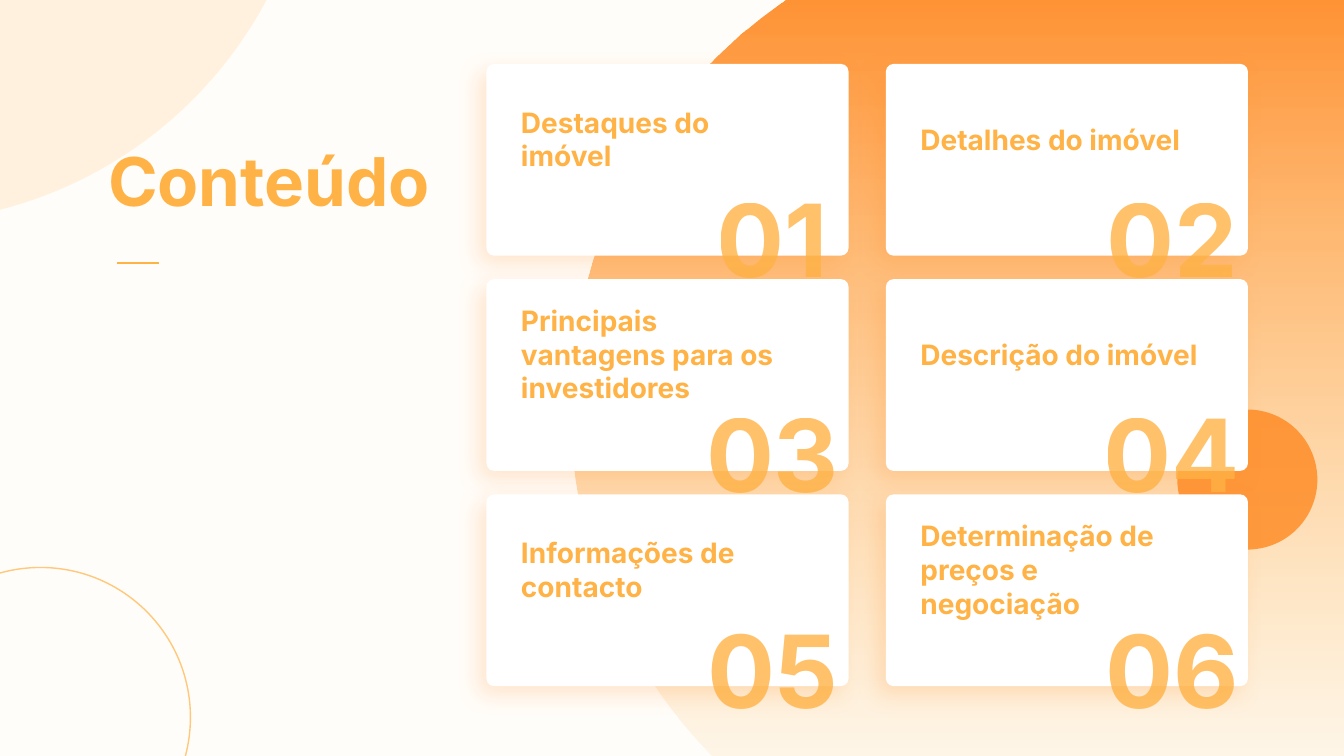
from dataclasses import dataclass
from itertools import pairwise
from math import cos, radians, sin, tan

from lxml import etree
from pptx import Presentation
from pptx import util as u
from pptx.dml.color import RGBColor
from pptx.enum import shapes, text
from pptx.oxml.ns import qn


@dataclass(frozen=True)
class Theme:
    """Colours, type face and type sizes of the deck."""
    paper: str = "FFFDF9"
    white: str = "FFFFFF"
    amber: str = "FFB245"
    flame: str = "FF881F"
    face: str = "Inter"
    head: int = 48
    label: int = 20
    digit: int = 72


THEME = Theme()
WIDE, HIGH = 33.87, 19.05
LABELS = (
    "Destaques do imóvel", "Detalhes do imóvel",
    "Principais vantagens para os investidores", "Descrição do imóvel",
    "Informações de contacto", "Determinação de preços e negociação",
)


def tint(code):
    """Turn a hex code into a colour."""
    return RGBColor.from_string(code)


def place(box):
    """Turn a box in centimetres into lengths."""
    return [u.Cm(side) for side in box]


def fade(shape, *shares):
    """Give the colours of a shape their opacity in percent."""
    for node, share in zip(shape.element.iter(qn("a:srgbClr")), shares):
        etree.SubElement(node, qn("a:alpha"), val=str(share * 1000))


def paint(shape, code):
    """Fill a shape with one colour and drop its line and shadow."""
    shape.shadow.inherit = False
    shape.fill.solid()
    shape.fill.fore_color.rgb = tint(code)
    shape.line.fill.background()


def glow(shape):
    """Cast a soft warm shadow to the lower left."""
    cast = etree.SubElement(
        shape.element.spPr.find(qn("a:effectLst")), qn("a:outerShdw"),
        blurRad=str(u.Pt(16)), dist=str(u.Pt(8)), dir=str(135 * 60000),
        algn="tr", rotWithShape="0")
    hue = etree.SubElement(cast, qn("a:srgbClr"), val=THEME.flame)
    etree.SubElement(hue, qn("a:alpha"), val="20000")


def write(shape, words, size, anchor, align, wrap=True):
    """Set one bold amber paragraph in a shape."""
    frame = shape.text_frame
    frame.auto_size = text.MSO_AUTO_SIZE.NONE
    frame.word_wrap = wrap
    frame.vertical_anchor = anchor
    line = frame.paragraphs[0]
    line.text = words
    line.alignment = align
    font = line.font
    font.name, font.size, font.bold = THEME.face, u.Pt(size), True
    font.color.rgb = tint(THEME.amber)
    return frame


def curve(page, hub, ray, turns, ends=(), close=True):
    """Draw arcs between turns in degrees, then go on through the end points."""
    def spot(turn, pull=0):
        """Find a point on the circle, pulled along its tangent."""
        t = radians(turn)
        return (hub[0] + ray * (cos(t) - pull * sin(t)),
                hub[1] + ray * (sin(t) + pull * cos(t)))

    dots = [spot(turns[0])]
    for start, stop in pairwise(turns):
        pull = 4 / 3 * tan(radians(stop - start) / 4)
        dots += [spot(start, pull), spot(stop, -pull), spot(stop)]
    dots = [place(dot) for dot in [*dots, *ends]]
    pen = page.shapes.build_freeform(*dots[0])
    pen.add_line_segments(dots[1:], close=close)
    shape = pen.convert_to_shape()

    lines = list(shape.element.iter(qn("a:lnTo")))
    for i in range(0, 3 * (len(turns) - 1), 3):
        bend = etree.Element(qn("a:cubicBezTo"))
        lines[i].addprevious(bend)
        for line in lines[i:i + 3]:
            bend.append(line[0])
            line.getparent().remove(line)
    return shape


def back(page, box):
    """Draw the backdrop of circles and the short rule."""
    left, top, wide, high = box
    right, base = left + wide, top + high

    sun = curve(page, (left + 26.88, top + 10.31), 12.5, (235.57, 180, 135.64),
                [(right, base), (right, top)])
    paint(sun, THEME.flame)
    sun.fill.gradient()
    sun.fill.gradient_angle = 270
    for stop, code in zip(sun.fill.gradient_stops, (THEME.flame, THEME.amber)):
        stop.color.rgb = tint(code)
    fade(sun, 90, 10)

    ball = page.shapes.add_shape(
        shapes.MSO_SHAPE.OVAL, *place((left + 29.67, top + 10.32, 3.53, 3.53)))
    paint(ball, THEME.flame)
    fade(ball, 80)

    moon = curve(page, (left - 2.64, top - 4.98), 10.6, (28.02, 75.58), [(left, top)])
    paint(moon, THEME.amber)
    fade(moon, 15)

    ring = curve(page, (left + 1.02, top + 18.08), 3.78, (-105.65, -90, 0, 14.87),
                 close=False)
    ring.shadow.inherit = False
    ring.fill.background()

    rule = page.shapes.add_connector(
        shapes.MSO_CONNECTOR.STRAIGHT,
        *place((left + 2.96, top + 6.63, left + 4.01, top + 6.63)))
    etree.SubElement(rule.element.spPr, qn("a:effectLst"))
    for shape, width in ((ring, 1), (rule, 1.5)):
        shape.line.color.rgb = tint(THEME.amber)
        shape.line.width = u.Pt(width)
    fade(ring, 70)


def title(page, box, words):
    """Set the title above the backdrop."""
    head = page.shapes.title
    head.left, head.top, head.width, head.height = place(box)
    write(head, words, THEME.head, text.MSO_ANCHOR.BOTTOM, text.PP_ALIGN.LEFT)
    page.shapes.element.append(head.element)


def card(page, box, count, words):
    """Draw a white card with its label and number."""
    left, top, wide, high = box
    panel = page.shapes.add_shape(shapes.MSO_SHAPE.ROUNDED_RECTANGLE, *place(box))
    panel.adjustments[0] = 0.04
    paint(panel, THEME.white)
    glow(panel)

    digit = page.shapes.add_textbox(
        *place((left + wide - 4.39, top + high - 2.65, 4.95, 3.71)))
    frame = write(digit, f"{count:02}", THEME.digit, text.MSO_ANCHOR.BOTTOM,
                  text.PP_ALIGN.CENTER, False)
    frame.margin_left = frame.margin_right = 0
    frame.margin_top = frame.margin_bottom = 0
    fade(digit, 80)

    label = page.shapes.add_textbox(*place((left + 0.62, top + 0.44, 7.52, 2.9)))
    write(label, words, THEME.label, text.MSO_ANCHOR.MIDDLE, text.PP_ALIGN.LEFT)


def cards(page, box, gap_x, gap_y):
    """Lay the cards out in two columns and three rows."""
    left, top, wide, high = box
    w, h = (wide - gap_x) / 2, (high - 2 * gap_y) / 3
    for i, words in enumerate(LABELS):
        row, col = divmod(i, 2)
        spot = (left + col * (w + gap_x), top + row * (h + gap_y), w, h)
        card(page, spot, i + 1, words)


def main():
    """Build and save the deck."""
    deck = Presentation()
    deck.slide_width, deck.slide_height = place((WIDE, HIGH))
    page = deck.slides.add_slide(deck.slide_layouts[5])
    page.background.fill.solid()
    page.background.fill.fore_color.rgb = tint(THEME.paper)
    back(page, (0, 0, WIDE, HIGH))
    title(page, (2.47, 1.73, 18.24, 3.94), "Conteúdo")
    cards(page, (12.26, 1.61, 19.19, 15.68), 0.94, 0.59)
    deck.save("out.pptx")


if __name__ == "__main__":
    main()
